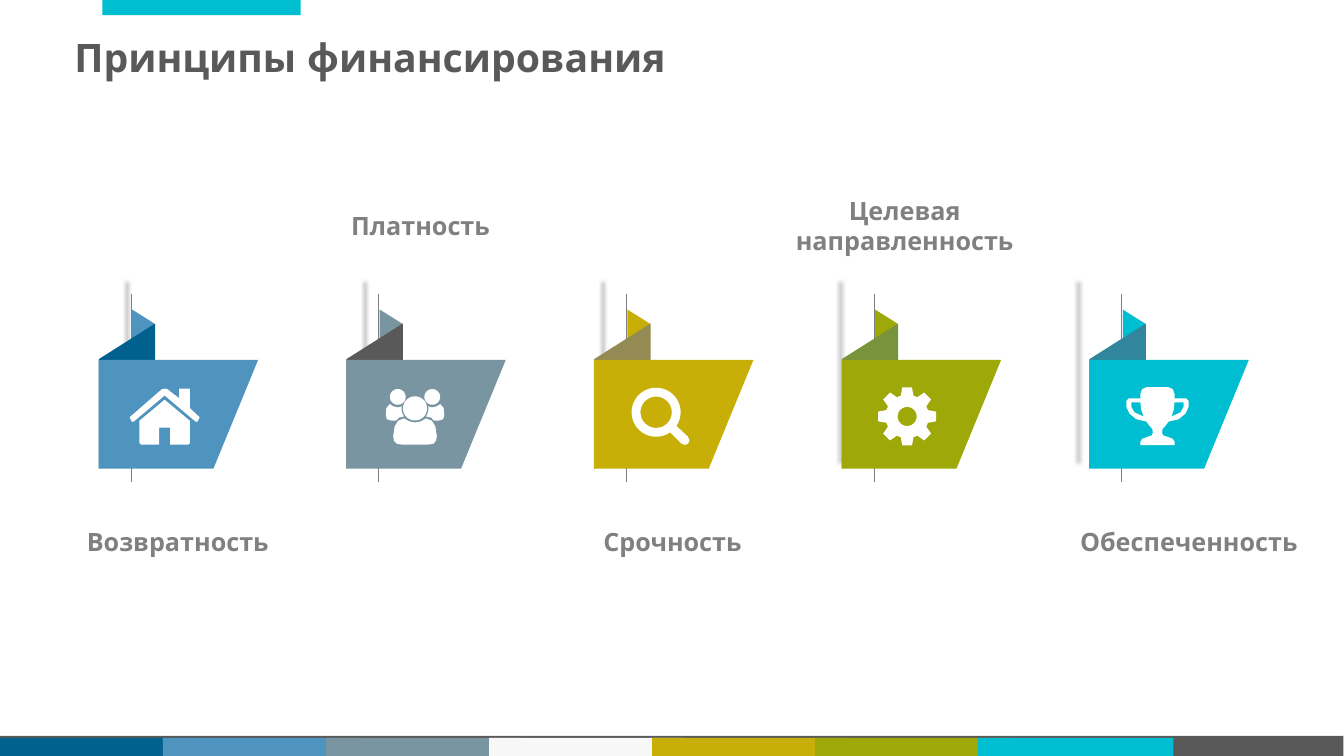
import math
from dataclasses import dataclass

import lxml.etree
import pptx
import pptx.dml.color
import pptx.enum.shapes
import pptx.enum.text
import pptx.oxml
import pptx.oxml.ns
import pptx.util

Pt = pptx.util.Pt
SHAPE = pptx.enum.shapes.MSO_SHAPE
ALIGN = pptx.enum.text.PP_ALIGN
Contour = list[tuple[float, float]]

FONT = "Quicksand"
COLORS = {
    "navy": "00618E", "blue": "4F94BE", "slate": "7995A1", "pale": "F7F7F7",
    "gold": "C7AF07", "olive": "9EA809", "cyan": "00BED1", "dark": "595959",
    "khaki": "948A54", "green": "77933C", "teal": "31859C",
    "gray": "808080", "white": "FFFFFF",
}
FLAG_LEFT, FLAG_STEP = 70.5, 177
FLAG_TOP, FLAG_BOTTOM = 257, 334.8
ICON_Y = 297.5
STRIP_STEP = 116.5


@dataclass
class Principle:
    text: str
    color: str
    fold: str
    icon: list[Contour]
    icon_x: float
    label_left: float
    label_top: float
    label_width: float
    label_height: float = 22


def rgb(name: str) -> pptx.dml.color.RGBColor:
    return pptx.dml.color.RGBColor.from_string(COLORS[name])


def arc(cx: float, cy: float, r: float, start: float = 0, end: float = 360) -> Contour:
    angles = [math.radians(start + (end - start) * i / 48) for i in range(49)]
    return [(cx + r * math.cos(a), cy + r * math.sin(a)) for a in angles]


def mirror(points: Contour) -> Contour:
    return [(-x, y) for x, y in reversed(points)]


def house() -> list[Contour]:
    roof = [(23.6, 3.6), (22, 3.6), (0, -15), (-22, 3.6), (-23.6, 3.6), (-25, 0.5),
            (-2, -19.5), (0, -20), (2, -19.5), (10.4, -13), (10.4, -20), (18, -20),
            (18, -6), (25, 0.5)]
    walls = [(18, 19), (17, 20), (4, 20), (4, 8), (-4, 8), (-4, 20), (-17, 20),
             (-18, 19), (-18, 3), (0, -12), (18, 3)]
    return [roof, walls]


def people() -> list[Contour]:
    torso = [(0, 4.3), (4, 3.5), (8, 1.4), (12, 3), (14.5, 7), (15.6, 14), (15, 17.5),
             (13, 19.5), (9.5, 20)]
    side = [(13.7, 3), (16.6, 3), (20, 2), (20.9, -0.5), (20.5, -6), (18, -8.9),
            (15.5, -7.2), (12.3, -6.5), (9.6, -7.2), (9.6, -4), (8, 0), (11.5, 0.8)]
    return [arc(0, -5.8, 8.6), torso + mirror(torso), side, mirror(side),
            arc(-12.3, -14, 5.6), arc(12.3, -14, 5.6)]


def magnifier() -> list[Contour]:
    handle = [(19.6, 14.5), (20.6, 17.3), (19.6, 19.5), (17.3, 20.3), (15, 19.5)]
    return [arc(-3.2, -3, 17.5, 55, 394) + handle, arc(-3.2, -3, 11.2)]


def gear() -> list[Contour]:
    tooth = [(15.5, -17), (21, -9.5), (21, 9.5), (15.5, 17)]
    polar = [(r, math.radians(45 * k + a)) for k in range(8) for r, a in tooth]
    return [[(r * math.cos(a), r * math.sin(a)) for r, a in polar], arc(0, 0, 6.8)]


def trophy() -> list[Contour]:
    half = [(0, -20.9), (8, -20.9), (11, -19.5), (12.2, -16), (12.2, -13), (20.5, -13),
            (22.3, -11), (22.3, -7), (20, -2), (15, 2), (8, 3.6), (5.8, 6.5), (3.6, 9),
            (3.3, 11.5), (4, 13.5), (7.2, 14.5), (11, 16), (12.2, 18), (12.2, 20.5),
            (0, 20.5)]
    handle = [(12.2, -10), (18.7, -10), (18.7, -7), (16.5, -3), (10, 0), (11.7, -5)]
    return [half + mirror(half), handle, mirror(handle)]


def paint(sp, color: str) -> None:
    sp.fill.solid()
    sp.fill.fore_color.rgb = rgb(color)
    sp.line.fill.background()
    sp.shadow.inherit = False


def add_preset(s, kind, left: float, top: float, width: float, height: float, color: str):
    sp = s.shapes.add_shape(kind, Pt(left), Pt(top), Pt(width), Pt(height))
    paint(sp, color)
    return sp


def add_fold(s, kind, left: float, top: float, width: float, height: float, color: str,
             rotation: float, flip: str, adjust: float) -> None:
    """Add a turned and flipped preset that forms part of the ribbon."""
    sp = add_preset(s, kind, left, top, width, height, color)
    sp.rotation = rotation
    sp.adjustments[0] = adjust
    sp._element.spPr.xfrm.set(flip, "1")


def add_outline(s, contours: list[Contour], left: float, top: float, color: str) -> None:
    """Add one freeform; inner contours become holes."""
    builder = None
    for contour in contours:
        points = [(Pt(left + x), Pt(top + y)) for x, y in contour]
        if builder is None:
            builder = s.shapes.build_freeform(*points[0])
        else:
            builder.move_to(*points[0])
        builder.add_line_segments(points[1:], close=True)
    paint(builder.convert_to_shape(), color)


def add_pole(s, x: float) -> None:
    line = s.shapes.add_connector(pptx.enum.shapes.MSO_CONNECTOR.STRAIGHT,
                                  Pt(x), Pt(209.7), Pt(x), Pt(344.3))
    line.line.color.rgb = rgb("gray")
    line.line.width = Pt(0.75)
    line._element.spPr.append(pptx.oxml.parse_xml(
        f'<a:effectLst {pptx.oxml.ns.nsdecls("a")}>'
        f'<a:outerShdw blurRad="{Pt(3)}" dist="{Pt(1)}" dir="0" sx="96000" sy="96000"'
        ' algn="l" rotWithShape="0"><a:srgbClr val="000000"><a:alpha val="95000"/>'
        '</a:srgbClr></a:outerShdw></a:effectLst>'))


def add_text(s, text: str, *, left: float, top: float, width: float, height: float,
             size: float, color: str, align=ALIGN.LEFT,
             inset: tuple[float, float] = (0, 0)) -> None:
    tf = s.shapes.add_textbox(Pt(left), Pt(top), Pt(width), Pt(height)).text_frame
    tf.word_wrap = True
    tf.auto_size = pptx.enum.text.MSO_AUTO_SIZE.SHAPE_TO_FIT_TEXT
    tf.margin_left = tf.margin_right = Pt(inset[0])
    tf.margin_top = tf.margin_bottom = Pt(inset[1])
    p = tf.paragraphs[0]
    p.alignment = align
    r = p.add_run()
    r.text = text
    r.font.name, r.font.size, r.font.bold = FONT, Pt(size), True
    r.font.color.rgb = rgb(color)


def add_principle(s, item: Principle, left: float) -> None:
    add_pole(s, left + 23.2)
    add_fold(s, SHAPE.TRAPEZOID, left - 15, 260, 93.6, 15.8, item.color, 90, "flipH", 0.625)
    add_fold(s, SHAPE.PARALLELOGRAM, left - 31.6, 262.8, 103.7, 40.3, item.fold,
             270, "flipV", 0.632)
    flag = [(0, FLAG_BOTTOM), (82, FLAG_BOTTOM), (114, FLAG_TOP), (0, FLAG_TOP)]
    add_outline(s, [flag], left, 0, item.color)
    add_outline(s, item.icon, left + item.icon_x, ICON_Y, "white")
    add_text(s, item.text, left=item.label_left, top=item.label_top,
             width=item.label_width, height=item.label_height,
             size=18, color="gray", align=ALIGN.CENTER)


PRINCIPLES = [
    Principle("Возвратность", "blue", "navy", house(), 47.2, 54.7, 375.8, 144.7),
    Principle("Платность", "slate", "dark", people(), 49.1, 228.2, 150.5, 144.7),
    Principle("Срочность", "gold", "khaki", magnifier(), 47.6, 408.2, 375.8, 144.7),
    Principle("Целевая направленность", "olive", "green", gear(), 46.8,
              565.2, 139.7, 162.7, 44),
    Principle("Обеспеченность", "cyan", "teal", trophy(), 48.7, 760.3, 375.8, 178.6),
]


def main() -> None:
    prs = pptx.Presentation()
    prs.slide_width, prs.slide_height = Pt(960.5), Pt(540)
    s = prs.slides.add_slide(prs.slide_layouts[6])

    add_preset(s, SHAPE.RECTANGLE, 0, 525.6, 960, 14.4, "dark")
    strips = ["navy", "blue", "slate", "pale", "gold", "olive", "cyan"]
    for i, color in enumerate(strips):
        add_preset(s, SHAPE.RECTANGLE, i * STRIP_STEP, 527, 139.7, 13, color)

    for i, item in enumerate(PRINCIPLES):
        add_principle(s, item, FLAG_LEFT + i * FLAG_STEP)

    add_text(s, "Принципы финансирования", left=48.2, top=20.9, width=828.7, height=39.6,
             size=28, color="dark", inset=(5, 2.9))
    add_preset(s, SHAPE.RECTANGLE, 73.2, 0, 141.8, 10.8, "cyan")
    prs.save("out.pptx")


if __name__ == "__main__":
    main()
